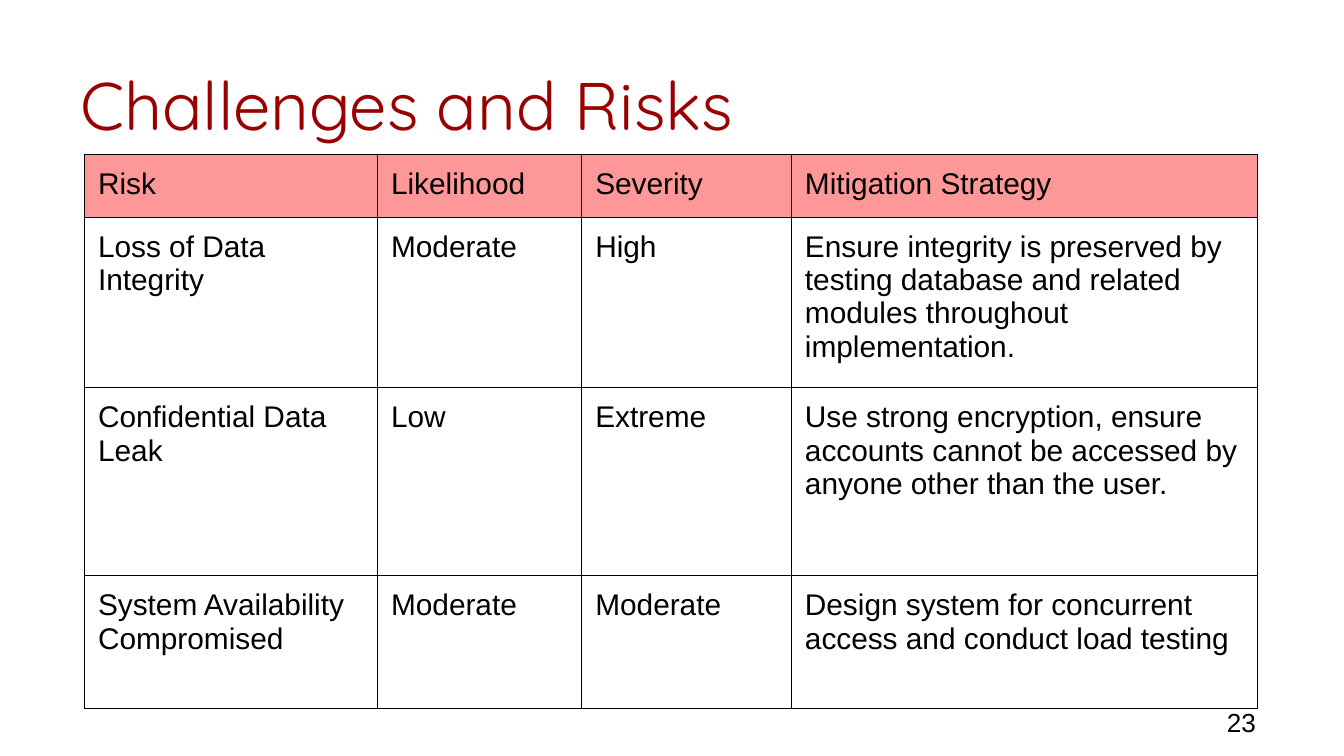
import pptx
import pptx.dml.color
import pptx.enum.text
import pptx.oxml
import pptx.oxml.ns
import pptx.util
from pptx.util import Inches

COLORS = {"title": "990000", "text": "000000", "border": "000000", "header": "FE9797"}
COLUMN_WIDTHS = [2.18, 1.52, 1.56, 3.47]
ROW_HEIGHTS = [0.45, 1.23, 1.4, 0.99]
RISKS = [
    ["Risk", "Likelihood", "Severity", "Mitigation Strategy"],
    ["Loss of Data Integrity", "Moderate", "High",
     "Ensure integrity is preserved by testing database and related modules "
     "throughout implementation."],
    ["Confidential Data Leak", "Low", "Extreme",
     "Use strong encryption, ensure accounts cannot be accessed by anyone "
     "other than the user."],
    ["System Availability Compromised", "Moderate", "Moderate",
     "Design system for concurrent access and conduct load testing"],
]


class SlideBuilder:
    """Holds the shared style and the slide being filled."""

    body_font = "Arial"
    title_font = "Quicksand"
    border_width = pptx.util.Pt(0.75)
    inset = Inches(0.1)

    def __init__(self, slide):
        self.slide = slide

    def color(self, name):
        return pptx.dml.color.RGBColor.from_string(COLORS[name])

    def style(self, paragraph, size, color="text", font=None):
        paragraph.font.name = font or self.body_font
        paragraph.font.size = pptx.util.Pt(size)
        paragraph.font.color.rgb = self.color(color)

    def text(self, content, left, top, width, height, size, color="text", font=None,
             anchor=pptx.enum.text.MSO_ANCHOR.TOP, vertical_inset=0.05):
        box = self.slide.shapes.add_textbox(
            Inches(left), Inches(top), Inches(width), Inches(height))
        frame = box.text_frame
        frame.word_wrap = True
        frame.vertical_anchor = anchor
        frame.margin_left = frame.margin_right = self.inset
        frame.margin_top = frame.margin_bottom = Inches(vertical_inset)
        frame.text = content
        self.style(frame.paragraphs[0], size, color, font)

    def border(self, cell):
        properties = cell._tc.get_or_add_tcPr()
        for side in ("lnL", "lnR", "lnT", "lnB"):
            properties.append(pptx.oxml.parse_xml(
                f'<a:{side} {pptx.oxml.ns.nsdecls("a")} w="{self.border_width}">'
                f'<a:solidFill><a:srgbClr val="{COLORS["border"]}"/></a:solidFill>'
                f'</a:{side}>'))

    def cell(self, cell, content, is_header):
        cell.margin_left = cell.margin_right = self.inset
        cell.margin_top = cell.margin_bottom = self.inset
        cell.text = content
        self.style(cell.text_frame.paragraphs[0], 16)
        self.border(cell)
        if is_header:
            cell.fill.solid()
            cell.fill.fore_color.rgb = self.color("header")
        else:
            cell.fill.background()

    def table(self, rows, left, top, widths, heights):
        """Add a table without the default style, whose font makes rows taller."""
        table = self.slide.shapes.add_table(
            len(rows), len(widths), Inches(left), Inches(top),
            Inches(sum(widths)), Inches(sum(heights))).table
        table._tbl.tblPr.clear()
        for column, width in zip(table.columns, widths):
            column.width = Inches(width)
        for row_index, (row, height) in enumerate(zip(rows, heights)):
            table.rows[row_index].height = Inches(height)
            for column_index, content in enumerate(row):
                self.cell(table.cell(row_index, column_index), content, row_index == 0)


def main():
    presentation = pptx.Presentation()
    presentation.slide_width = Inches(10)
    presentation.slide_height = presentation.slide_width * 9 // 16
    builder = SlideBuilder(presentation.slides.add_slide(presentation.slide_layouts[6]))

    builder.text("Challenges and Risks", 0.5, 0.23, 9, 0.94, 36, "title",
                 builder.title_font, pptx.enum.text.MSO_ANCHOR.BOTTOM, 0.1)
    builder.table(RISKS, 0.63, 1.15, COLUMN_WIDTHS, ROW_HEIGHTS)
    builder.text("23", 9.03, 5.21, 0.75, 0.3, 14)

    presentation.save("out.pptx")


if __name__ == "__main__":
    main()
